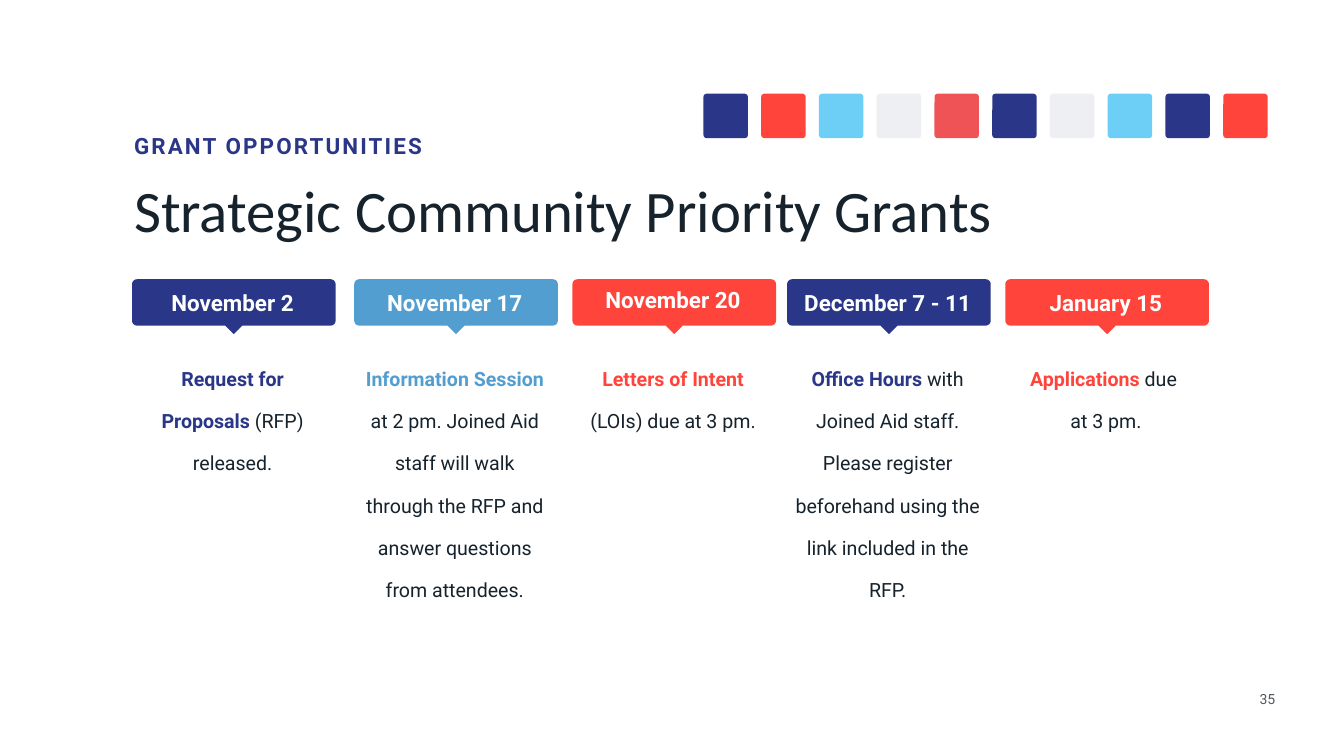
"""Builds the grant timeline slide."""
import math

from pptx import Presentation
from pptx.dml.color import RGBColor
from pptx.enum.shapes import MSO_SHAPE
from pptx.enum.text import MSO_ANCHOR, MSO_AUTO_SIZE, PP_ALIGN
from pptx.util import Inches, Pt

LEFT, CENTER = PP_ALIGN.LEFT, PP_ALIGN.CENTER
TOP, MIDDLE = MSO_ANCHOR.TOP, MSO_ANCHOR.MIDDLE
NO_AUTOFIT = MSO_AUTO_SIZE.NONE
ROUNDED = MSO_SHAPE.ROUNDED_RECTANGLE
TITLE_ONLY = 5

GRID_COLUMNS, GRID_ROWS = 26.67, 15
MARGIN = 2.62
NAVY, RED, BLUE = "2A3688", "FF443B", "539ED0"
SKY, PALE, CORAL = "6DCFF6", "EEEFF2", "F05355"
INK, GRAY, WHITE = "16222C", "51585F", "FEFFFF"

SQUARES = [NAVY, RED, SKY, PALE, CORAL, NAVY, PALE, SKY, NAVY, RED]
SQUARE_LEFT, SQUARE_TOP, SQUARE_SIZE, SQUARE_PITCH = 13.96, 1.86, 0.88, 1.146
STEP_WIDTH = 3.99
STEPS = [
    (2.62, 5.69, NAVY, "November 2", "Request for Proposals ", "(RFP) released.", 2.65),
    (7.03, 5.69, BLUE, "November 17", "Information Session ",
     "at 2 pm. Joined Aid staff will walk through the RFP and answer questions "
     "from attendees.", 5.19),
    (11.36, 5.63, RED, "November 20", "Letters of Intent ", "(LOIs) due at 3 pm.", 1.8),
    (15.62, 5.69, NAVY, "December 7 - 11", "Office Hours ",
     "with Joined Aid staff. Please register beforehand using the link "
     "included in the RFP.", 5.19),
    (19.95, 5.69, RED, "January 15", "Applications ", "due \nat 3 pm.", 1.68),
]


def color(hex_string):
    """Return the colour for a hex string."""
    return RGBColor.from_string(hex_string)


def write(shape, *runs, size, font="Roboto", align=LEFT, anchor=TOP,
          inset=(0.04, 0.04), line_spacing=None, tracking=None):
    """Fill a shape with runs of (text, colour, bold) in one paragraph."""
    frame = shape.text_frame
    frame.word_wrap = True
    frame.auto_size = NO_AUTOFIT
    frame.vertical_anchor = anchor
    frame.margin_left = frame.margin_right = Inches(inset[0])
    frame.margin_top = frame.margin_bottom = Inches(inset[1])
    paragraph = frame.paragraphs[0]
    paragraph.alignment = align
    if line_spacing:
        paragraph.line_spacing = line_spacing
    for text, hex_string, bold in runs:
        for index, line in enumerate(text.split("\n")):
            if index:
                paragraph.add_line_break()
            run = paragraph.add_run()
            run.text = line
            run.font.name = font
            run.font.size = Pt(size)
            run.font.bold = bold
            run.font.color.rgb = color(hex_string)
            if tracking:
                run._r.get_or_add_rPr().set("spc", str(tracking * 100))


class SlideBuilder:
    """Holds the grid and the current slide."""

    def __init__(self, presentation):
        """Add a title-only slide and measure its grid."""
        self.slide = presentation.slides.add_slide(presentation.slide_layouts[TITLE_ONLY])
        self.column = presentation.slide_width / GRID_COLUMNS
        self.row = presentation.slide_height / GRID_ROWS

    def box(self, left, top, width, height):
        """Convert grid lengths to slide lengths."""
        return (round(left * self.column), round(top * self.row),
                round(width * self.column), round(height * self.row))

    def title(self, text, *place, **style):
        """Place and fill the title."""
        title = self.slide.shapes.title
        title.left, title.top, title.width, title.height = self.box(*place)
        write(title, (text, INK, False), **style)

    def text(self, runs, *place, **style):
        """Add a text box."""
        write(self.slide.shapes.add_textbox(*self.box(*place)), *runs, **style)

    def paint(self, shape, hex_string):
        """Give a shape a plain fill."""
        shape.shadow.inherit = False
        shape.fill.solid()
        shape.fill.fore_color.rgb = color(hex_string)
        shape.line.fill.background()

    def square(self, left, top, size, hex_string):
        """Add a slightly rounded square."""
        shape = self.slide.shapes.add_shape(ROUNDED, *self.box(left, top, size, size))
        shape.adjustments[0] = 0.068
        self.paint(shape, hex_string)

    def flag(self, left, top, width, height, hex_string, radius=0.1, pointer=0.17):
        """Add a rounded banner with a pointer below its middle."""
        right, bottom, middle = left + width, top + height, left + width / 2

        def corner(x, y, start):
            """Return the points of a quarter circle."""
            angles = [math.radians(start + step * 15) for step in range(7)]
            return [(x + radius * math.cos(a), y + radius * math.sin(a)) for a in angles]

        points = corner(left + radius, top + radius, 180)
        points += corner(right - radius, top + radius, 270)
        points += corner(right - radius, bottom - radius, 0)
        points += [(middle + pointer, bottom), (middle, bottom + pointer),
                   (middle - pointer, bottom)]
        points += corner(left + radius, bottom - radius, 90)
        points = [(round(x * self.column), round(y * self.row)) for x, y in points]
        builder = self.slide.shapes.build_freeform(*points[0])
        builder.add_line_segments(points[1:], close=True)
        self.paint(builder.convert_to_shape(), hex_string)

    def step(self, left, label_top, hex_string, date, lead, detail, height):
        """Add a dated banner with its description."""
        self.text([(lead, hex_string, True), (detail, INK, False)],
                  left, 6.85, STEP_WIDTH, height, size=28, align=CENTER,
                  inset=(0.1, 0.05), line_spacing=1.8)
        self.flag(left, 5.54, 4.04, 0.92, hex_string)
        self.text([(date, WHITE, True)], left, label_top, STEP_WIDTH, 0.53,
                  size=32, align=CENTER)


def main():
    """Build and save the presentation."""
    presentation = Presentation()
    presentation.slide_width = Inches(GRID_COLUMNS)
    presentation.slide_height = Inches(GRID_ROWS)
    builder = SlideBuilder(presentation)
    builder.text([("35", GRAY, False)], 24.66, 13.66, 0.98, 0.42, size=20, align=CENTER)
    builder.title("Strategic Community Priority Grants", MARGIN, 3.41, 21.86, 1.73,
                  size=84, font="Calibri")
    builder.text([("GRANT OPPORTUNITIES", NAVY, True)], MARGIN, 2.57, 6.12, 0.62,
                 size=32, anchor=MIDDLE, tracking=3)
    for step in STEPS:
        builder.step(*step)
    for index, hex_string in enumerate(SQUARES):
        builder.square(SQUARE_LEFT + index * SQUARE_PITCH, SQUARE_TOP, SQUARE_SIZE, hex_string)
    presentation.save("out.pptx")


if __name__ == "__main__":
    main()
